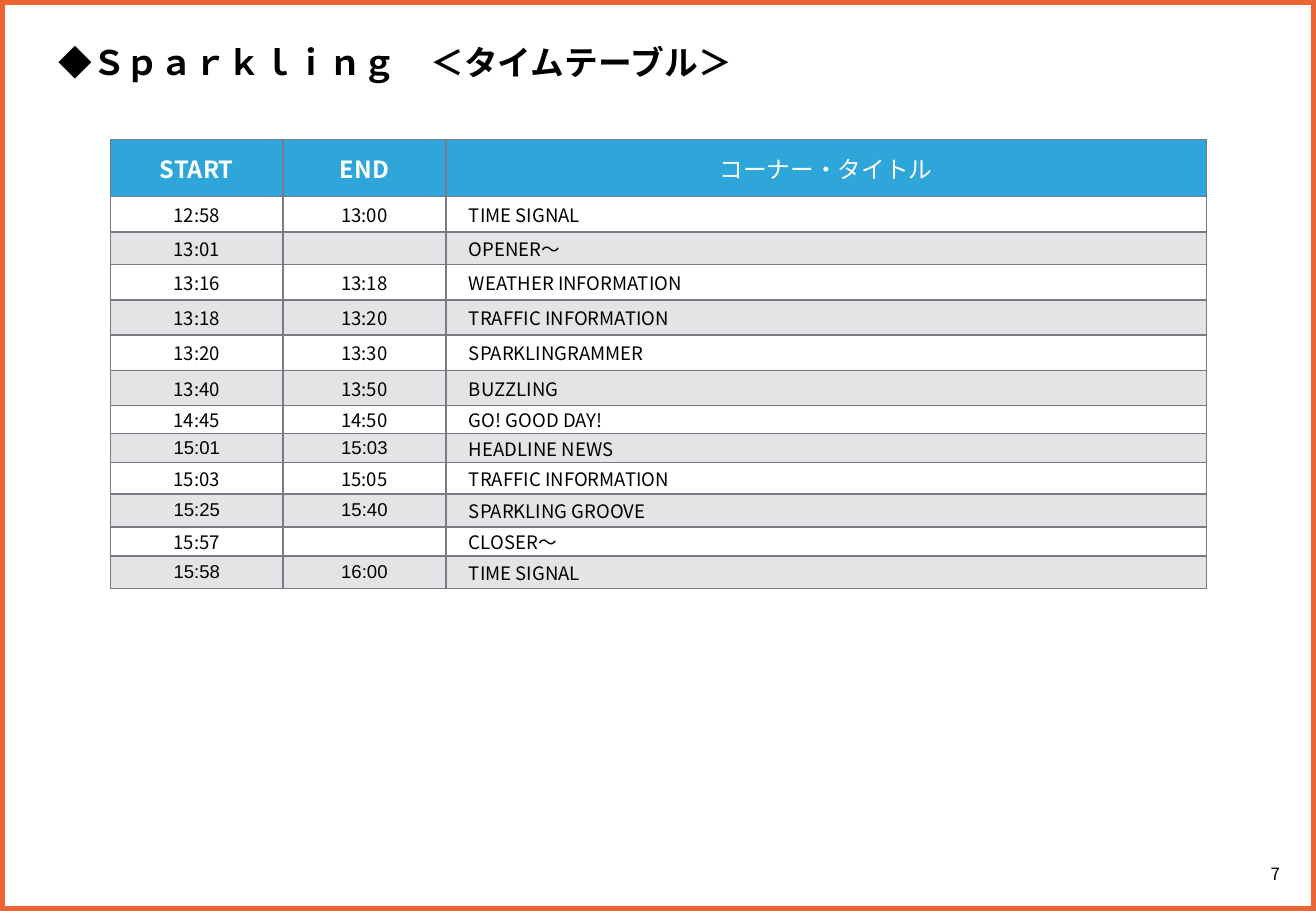
import pptx
import pptx.util
import pptx.dml.color
import pptx.enum.shapes
import pptx.enum.text
import pptx.oxml
import pptx.oxml.ns
from lxml import etree

WIDE, HIGH = 1083, 750
UNIT = pptx.util.Inches(0.01)
SANS, ARIAL = "Noto Sans CJK JP", "Arial"
BLACK, WHITE, BLUE, GREY, ORANGE = "000000", "FFFFFF", "2EA6DA", "797B84", "EB6432"
ALIGN = pptx.enum.text.PP_ALIGN
MIDDLE = pptx.enum.text.MSO_ANCHOR.MIDDLE
INDENT = 19

COLS = [142, 134, 626]
HEAD = [("START", SANS, True), ("END", SANS, True), ("コーナー・タイトル", ARIAL, False)]
HEAD_ROW = 47
SHOWS = [
    (29, "12:58", "13:00", "TIME SIGNAL", SANS),
    (27, "13:01", "", "OPENER〜", SANS),
    (29, "13:16", "13:18", "WEATHER INFORMATION", SANS),
    (29, "13:18", "13:20", "TRAFFIC INFORMATION", SANS),
    (29, "13:20", "13:30", "SPARKLINGRAMMER", SANS),
    (29, "13:40", "13:50", "BUZZLING", SANS),
    (23, "14:45", "14:50", "GO! GOOD DAY!", SANS),
    (24, "15:01", "15:03", "HEADLINE NEWS", ARIAL),
    (26, "15:03", "15:05", "TRAFFIC INFORMATION", SANS),
    (27, "15:25", "15:40", "SPARKLING GROOVE", ARIAL),
    (24, "15:57", "", "CLOSER〜", SANS),
    (27, "15:58", "16:00", "TIME SIGNAL", ARIAL),
]


def paint(color, tint):
    color.rgb = pptx.dml.color.RGBColor.from_string(tint)


def grid(box):
    return [UNIT * n for n in box]


def style(run, size, face, tint, bold=False):
    run.font.size = pptx.util.Pt(size)
    run.font.name = face
    run.font.bold = bold
    paint(run.font.color, tint)
    east = etree.SubElement(run._r.get_or_add_rPr(), pptx.oxml.ns.qn("a:ea"))
    east.set("typeface", SANS)


def add_title(slide, box):
    title = slide.shapes.title
    title.left, title.top, title.width, title.height = grid(box)
    frame = title.text_frame
    frame.word_wrap = True
    frame.auto_size = pptx.enum.text.MSO_AUTO_SIZE.NONE
    frame.vertical_anchor = MIDDLE
    line = frame.paragraphs[0]
    line.alignment = ALIGN.LEFT
    for text, bold in [("◆", False), ("Ｓｐａｒｋｌｉｎｇ　＜タイムテーブル＞", True)]:
        run = line.add_run()
        run.text = text
        style(run, 20, SANS, BLACK, bold)


def add_frame(slide, box):
    frame = slide.shapes.add_shape(pptx.enum.shapes.MSO_SHAPE.RECTANGLE, *grid(box))
    frame.shadow.inherit = False
    frame.fill.background()
    paint(frame.line.color, ORANGE)
    frame.line.width = pptx.util.Pt(6)


def add_page(slide, box):
    frame = slide.shapes.add_textbox(*grid(box)).text_frame
    frame.word_wrap = True
    frame.vertical_anchor = MIDDLE
    frame.text = "7"
    frame.paragraphs[0].alignment = ALIGN.CENTER
    style(frame.paragraphs[0].runs[0], 10, SANS, BLACK)


def add_edges(cell):
    props = cell._tc.get_or_add_tcPr()
    for spot, side in enumerate("LRTB"):
        props.insert(spot, pptx.oxml.parse_xml(
            f'<a:ln{side} {pptx.oxml.ns.nsdecls("a")} w="{pptx.util.Pt(1)}">'
            f'<a:solidFill><a:srgbClr val="{GREY}"/></a:solidFill></a:ln{side}>'))


def fill_cell(cell, tint, alpha=100):
    if not tint:
        cell.fill.background()
        return
    cell.fill.solid()
    paint(cell.fill.fore_color, tint)
    if alpha < 100:
        shade = cell._tc.tcPr.find(".//" + pptx.oxml.ns.qn("a:srgbClr"))
        etree.SubElement(shade, pptx.oxml.ns.qn("a:alpha")).set("val", str(alpha * 1000))


def set_cell(cell, text, size, face, tint, bold=False, inset=0):
    cell.margin_left = UNIT * inset
    cell.margin_right = cell.margin_top = cell.margin_bottom = 0
    cell.vertical_anchor = MIDDLE
    line = cell.text_frame.paragraphs[0]
    line.alignment = ALIGN.LEFT if inset else ALIGN.CENTER
    if text:
        line.text = text
        style(line.runs[0], size, face, tint, bold)
    else:
        end = etree.SubElement(line._p, pptx.oxml.ns.qn("a:endParaRPr"))
        end.set("sz", str(size * 100))
    add_edges(cell)


def add_times(slide, box):
    rows = [HEAD_ROW] + [show[0] for show in SHOWS]
    table = slide.shapes.add_table(len(rows), len(COLS), *grid(box)).table
    table.first_row = table.horz_banding = False
    for parts, sizes, total, attr in [
        (table.columns, COLS, box[2], "width"),
        (table.rows, rows, box[3], "height"),
    ]:
        for part, size in zip(parts, sizes):
            setattr(part, attr, int(UNIT * total * size / sum(sizes)))
    for col, (text, face, bold) in enumerate(HEAD):
        cell = table.cell(0, col)
        fill_cell(cell, BLUE)
        set_cell(cell, text, 14, face, WHITE, bold)
    for row, (_, start, end, name, face) in enumerate(SHOWS, 1):
        items = [(start, face, 0), (end, face, 0), (name, SANS, INDENT)]
        for col, (text, font, inset) in enumerate(items):
            cell = table.cell(row, col)
            band = row % 2 == 0
            fill_cell(cell, GREY if band else None, 20)
            set_cell(cell, text, 11, font, BLACK, inset=inset)


def main():
    deck = pptx.Presentation()
    deck.slide_width, deck.slide_height = grid((WIDE, HIGH))
    slide = deck.slides.add_slide(deck.slide_layouts.get_by_name("Title Only"))
    add_page(slide, (WIDE - 67, 702, 67, 35))
    add_frame(slide, (0, 0, WIDE, HIGH))
    add_times(slide, (91, 115, 902, 370))
    add_title(slide, (38, 29, 654, 44))
    deck.save("out.pptx")


if __name__ == "__main__":
    main()
